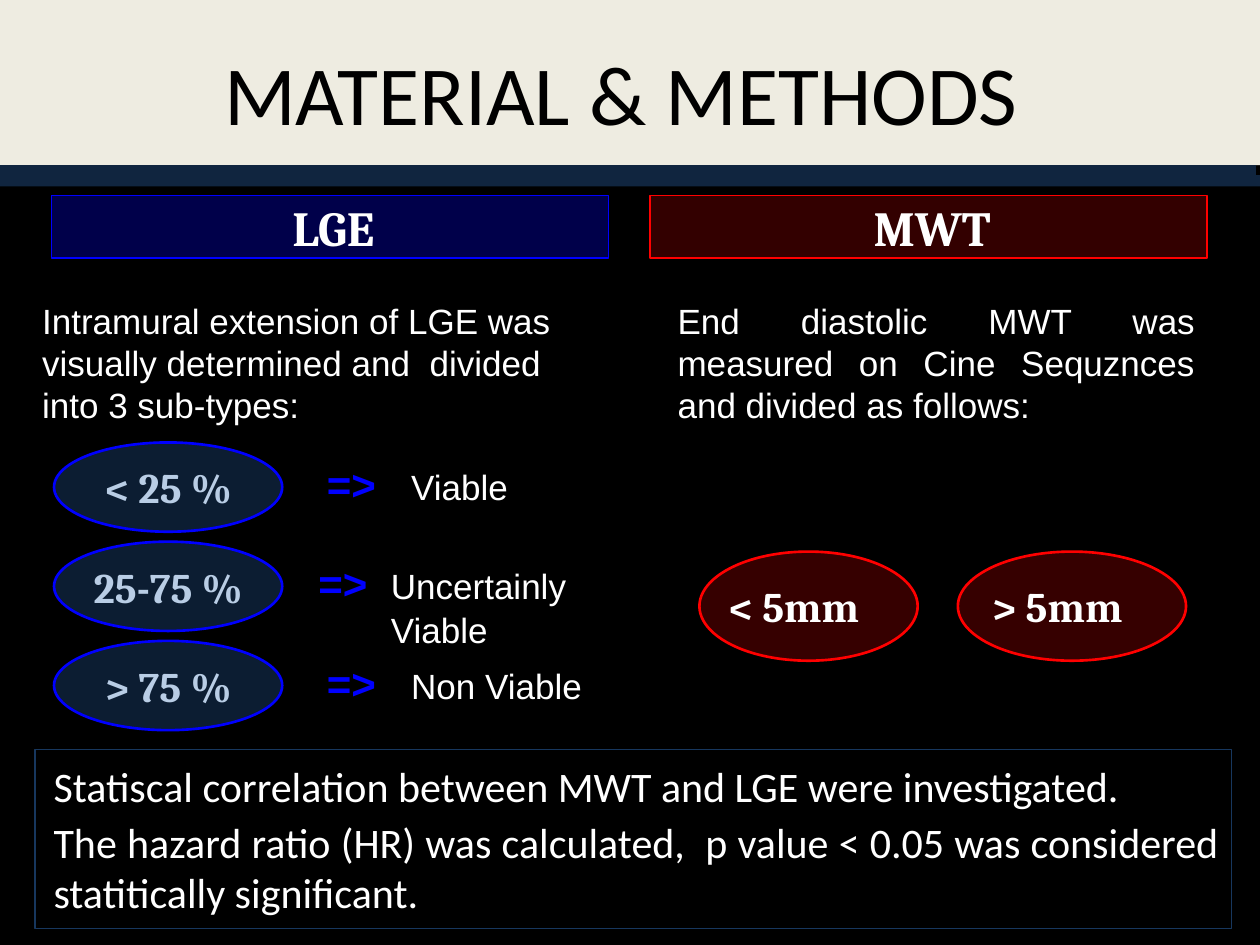
import dataclasses

import pptx
import pptx.dml.color
import pptx.enum.shapes
import pptx.enum.text
import pptx.oxml.ns
import pptx.util
from lxml import etree

Cm = pptx.util.Cm
Pt = pptx.util.Pt
ALIGN = pptx.enum.text.PP_ALIGN
ANCHOR = pptx.enum.text.MSO_ANCHOR
SHAPE = pptx.enum.shapes.MSO_SHAPE


@dataclasses.dataclass(frozen=True)
class Theme:
    page: str = "000000"
    cream: str = "EEECE1"
    band: str = "10253F"
    ink: str = "000000"
    white: str = "FFFFFF"
    blue: str = "0000FF"
    red: str = "FF0000"
    navy: str = "1F497D"
    pale: str = "B9CDE5"
    border: str = "17375E"
    sans: str = "Arial"
    serif: str = "Cambria"
    plain: str = "Calibri"
    title: int = 48
    heading: int = 28
    large: int = 24
    body: int = 20


T = Theme()


def rgb(value):
    return pptx.dml.color.RGBColor.from_string(value)


def apply(obj, fmt):
    for name, value in fmt.items():
        setattr(obj, name, value)


def add_run(p, text, font, size, color, bold=False):
    r = p.add_run()
    r.text = text
    apply(r.font, {"name": font, "size": Pt(size), "bold": bold})
    r.font.color.rgb = rgb(color)


def indent(p, left, first=0):
    pPr = p._p.get_or_add_pPr()
    pPr.set("marL", str(Cm(left)))
    pPr.set("indent", str(Cm(first)))


def add_shape(s, kind, box, fill=None, alpha=100, line=None, width=1):
    sp = s.shapes.add_shape(kind, *map(Cm, box))
    sp.shadow.inherit = False
    if fill:
        sp.fill.solid()
        sp.fill.fore_color.rgb = rgb(fill)
        if alpha < 100:
            clr = sp.fill._xPr.find(".//" + pptx.oxml.ns.qn("a:srgbClr"))
            etree.SubElement(clr, pptx.oxml.ns.qn("a:alpha")).set("val", str(alpha * 1000))
    else:
        sp.fill.background()
    if line:
        sp.line.color.rgb = rgb(line)
        sp.line.width = Pt(width)
    else:
        sp.line.fill.background()
    return sp


def add_header(s, text):
    for x, y, h, color in ((0, 3.53, 0.23, T.band), (0, 0, 3.33, T.cream), (-0.08, 3.33, 0.25, T.band)):
        add_shape(s, SHAPE.RECTANGLE, (x, y, 25.4, h), color)
    sp = s.shapes.title
    apply(sp, {"left": Cm(1.09), "top": Cm(0.36), "width": Cm(22.86), "height": Cm(2.97)})
    tf = sp.text_frame
    tf.vertical_anchor = ANCHOR.MIDDLE
    p = tf.paragraphs[0]
    p.alignment = ALIGN.CENTER
    add_run(p, text, T.plain, T.title, T.ink)
    s.shapes._spTree.append(sp._element)


def add_heading(s, box, text, color, alpha):
    sp = add_shape(s, SHAPE.RECTANGLE, box, color, alpha, color)
    tf = sp.text_frame
    tf.vertical_anchor = ANCHOR.MIDDLE
    p = tf.paragraphs[0]
    apply(p, {"alignment": ALIGN.CENTER, "space_before": Pt(3)})
    indent(p, 0.13)
    add_run(p, text, T.serif, T.heading, T.white, True)


def add_intro(s, box, text, align):
    tf = s.shapes.add_textbox(*map(Cm, box)).text_frame
    tf.word_wrap = True
    p = tf.paragraphs[0]
    apply(p, {"alignment": align, "space_before": Pt(3)})
    add_run(p, text, T.sans, T.body, T.white)


def add_oval(s, box, text, fill, alpha, line, color, inset_right=0):
    sp = add_shape(s, SHAPE.OVAL, box, fill, alpha, line, 1.5)
    tf = sp.text_frame
    apply(tf, {"margin_left": 0, "margin_right": Cm(inset_right), "margin_top": 0,
               "margin_bottom": 0, "word_wrap": False, "vertical_anchor": ANCHOR.MIDDLE})
    p = tf.paragraphs[0]
    p.alignment = ALIGN.CENTER
    add_run(p, text, T.serif, T.large, color, True)


def add_outcome(s, box, text, hang):
    tf = s.shapes.add_textbox(*map(Cm, box)).text_frame
    tf.word_wrap = True
    p = tf.paragraphs[0]
    p.alignment = ALIGN.LEFT
    indent(p, hang, -hang)
    add_run(p, "=>\t", T.sans, T.large, T.blue, True)
    add_run(p, text, T.sans, T.body, T.white)


def add_lge(s, box):
    x, y, w, h = box
    add_heading(s, (x, y, w, 1.27), "LGE", T.blue, 29)
    add_intro(s, (x - 0.44, y + 1.98, w, 2.6),
              "Intramural extension of LGE was visually determined and  divided into 3 sub-types:", ALIGN.LEFT)
    rows = (("< 25 %", "Viable", 5.3, 1.7),
            ("25-75 %", "Uncertainly Viable", 5.13, 1.46),
            ("> 75 %", "Non Viable", 5.3, 1.7))
    for i, (extent, outcome, dx, hang) in enumerate(rows):
        top = y + 4.98 + 2 * i
        add_oval(s, (x + 0.05, top, 4.6, 1.8), extent, T.navy, 40, T.blue, T.pale)
        add_outcome(s, (x + dx, top + 0.2, 5.9, 1.27), outcome, hang)


def add_mwt(s, box):
    x, y, w, h = box
    add_heading(s, (x, y, w, 1.27), "MWT", T.red, 20)
    add_intro(s, (x + 0.3, y + 1.98, w - 0.3, 2.6),
              "End diastolic MWT was measured on Cine Sequznces and divided as follows:", ALIGN.JUSTIFY)
    for text, dx, width in (("< 5mm", 0.99, 4.4), ("> 5mm", 6.2, 4.6)):
        add_oval(s, (x + dx, y + 7.18, width, 2.2), text, T.red, 21, T.red, T.white, 0.6)


def add_statistics(s, box):
    sp = add_shape(s, SHAPE.RECTANGLE, box, line=T.border)
    tf = sp.text_frame
    apply(tf, {"word_wrap": True, "vertical_anchor": ANCHOR.MIDDLE})
    lines = ("Statiscal correlation between MWT and LGE were investigated.",
             "The hazard ratio (HR) was calculated,  p value < 0.05 was considered statitically significant.")
    for i, text in enumerate(lines):
        p = tf.add_paragraph() if i else tf.paragraphs[0]
        apply(p, {"alignment": ALIGN.JUSTIFY, "space_before": Pt(3)})
        indent(p, 0.13)
        add_run(p, text, T.plain, T.large, T.white)


def main():
    prs = pptx.Presentation()
    apply(prs, {"slide_width": Cm(25.4), "slide_height": Cm(19.05)})
    s = prs.slides.add_slide(prs.slide_layouts[5])
    s.background.fill.solid()
    s.background.fill.fore_color.rgb = rgb(T.page)
    add_header(s, "MATERIAL & METHODS")
    add_lge(s, (1.04, 3.94, 11.23, 10.8))
    add_mwt(s, (13.11, 3.94, 11.23, 10.8))
    add_statistics(s, (0.7, 15.11, 24.13, 3.61))
    prs.save("out.pptx")


if __name__ == "__main__":
    main()
